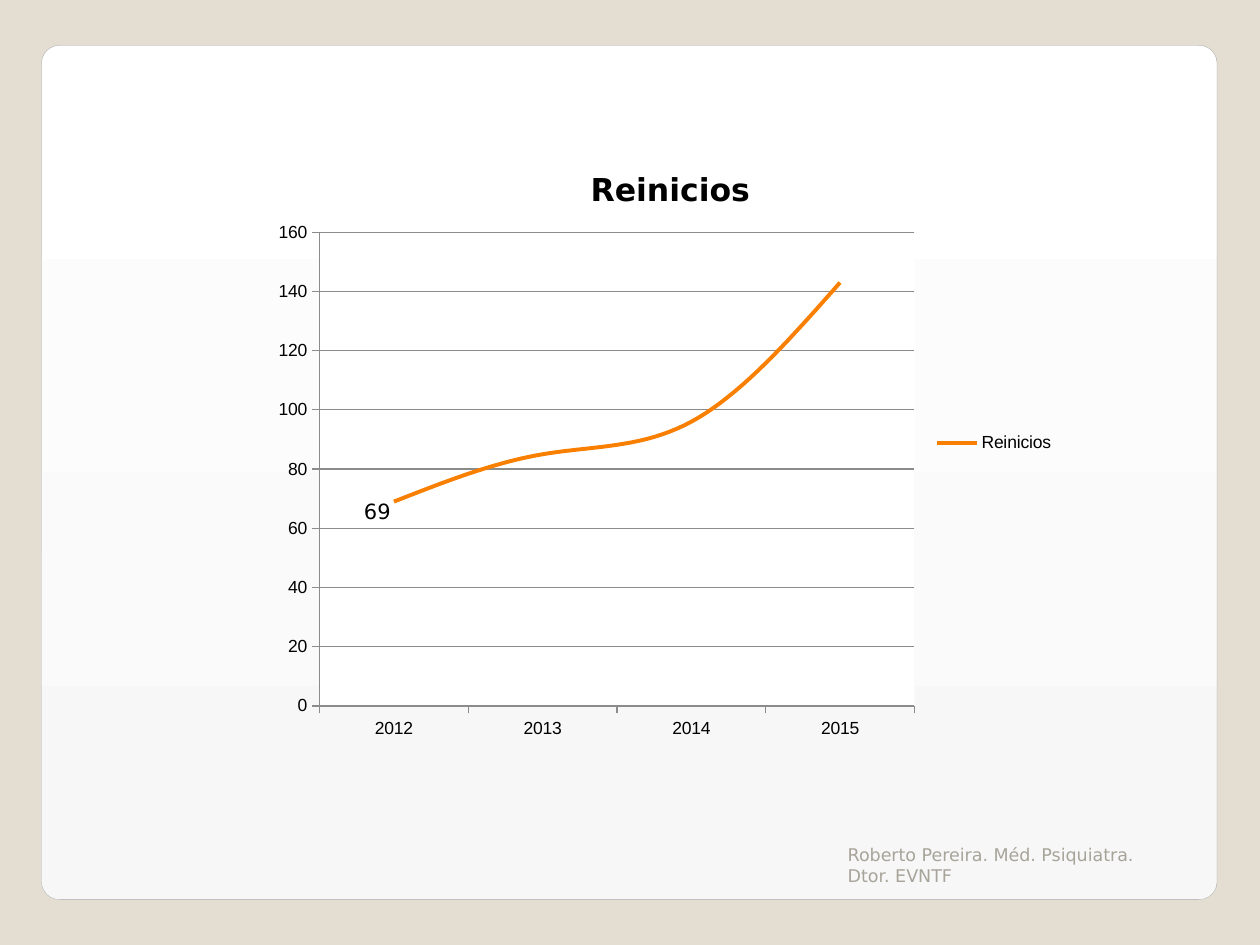
from dataclasses import dataclass

from lxml import etree
from pptx import Presentation
from pptx.chart.data import CategoryChartData
from pptx.dml.color import RGBColor
from pptx.enum.chart import XL_CHART_TYPE, XL_LEGEND_POSITION, XL_TICK_MARK
from pptx.enum.shapes import MSO_SHAPE
from pptx.enum.text import MSO_ANCHOR
from pptx.oxml.ns import qn
from pptx.util import Inches, Pt

LINE = XL_CHART_TYPE.LINE
RIGHT = XL_LEGEND_POSITION.RIGHT
OUTSIDE = XL_TICK_MARK.OUTSIDE
ROUNDED = MSO_SHAPE.ROUNDED_RECTANGLE
TOP, BOTTOM = MSO_ANCHOR.TOP, MSO_ANCHOR.BOTTOM

SAND = RGBColor(0xE3, 0xDE, 0xD1)
WHITE = RGBColor(0xFF, 0xFF, 0xFF)
PALE = RGBColor(0xF7, 0xF7, 0xF7)
EDGE = RGBColor(0xA4, 0xA4, 0xA3)
AXIS = RGBColor(0x8B, 0x8B, 0x8B)
ORANGE = RGBColor(0xF9, 0x7F, 0x00)
BLACK = RGBColor(0x00, 0x00, 0x00)
STONE = RGBColor(0xA7, 0xA4, 0x9A)

BODY_FONT, HEAD_FONT = "Arial", "DejaVu Sans"
WIDTH, HEIGHT = Inches(10), Inches(7.5)
NAME = "Reinicios"
STARTS = {"2012": 69, "2013": 85, "2014": 96, "2015": 143}


@dataclass
class Box:
    x: float
    y: float
    w: float
    h: float

    def place(self) -> tuple:
        return (int(self.x * WIDTH), int(self.y * HEIGHT),
                int(self.w * WIDTH), int(self.h * HEIGHT))


@dataclass
class Label:
    text: str
    box: Box
    size: int
    color: RGBColor
    anchor: MSO_ANCHOR


PANEL = Box(0.033, 0.048, 0.933, 0.904)
CHART = Box(0.209, 0.143, 0.638, 0.651)
LABELS = [
    Label("69", Box(0.279, 0.521, 0.055, 0.04), 12, BLACK, TOP),
    Label("Roberto Pereira. Méd. Psiquiatra. Dtor. EVNTF",
          Box(0.663, 0.891, 0.25, 0.053), 10, STONE, BOTTOM),
]


def set_font(font, color: RGBColor, **values) -> None:
    for key, value in values.items():
        setattr(font, key, value)
    font.color.rgb = color


def set_line(line, color: RGBColor, width: float) -> None:
    line.color.rgb = color
    line.width = Pt(width)


def set_layout(parent, index: int, **shares: float) -> None:
    for old in parent.findall(qn("c:layout")):
        parent.remove(old)
    layout = etree.Element(qn("c:layout"))
    parent.insert(index, layout)
    manual = etree.SubElement(layout, qn("c:manualLayout"))
    if "w" in shares:
        etree.SubElement(manual, qn("c:layoutTarget")).set("val", "inner")
    for mode in ("xMode", "yMode"):
        etree.SubElement(manual, qn(f"c:{mode}")).set("val", "edge")
    for key, share in shares.items():
        etree.SubElement(manual, qn(f"c:{key}")).set("val", str(share))


def add_panel(s) -> None:
    sp = s.shapes.add_shape(ROUNDED, *PANEL.place())
    sp.shadow.inherit = False
    sp.adjustments[0] = 0.021
    sp.fill.gradient()
    sp.fill.gradient_angle = 270
    for stop, color, position in zip(sp.fill.gradient_stops, (WHITE, PALE), (0, 1)):
        stop.color.rgb = color
        stop.position = position
    set_line(sp.line, EDGE, 0.17)


def add_line_chart(s) -> None:
    data = CategoryChartData()
    data.categories = list(STARTS)
    data.add_series(NAME, list(STARTS.values()))
    chart = s.shapes.add_chart(LINE, *CHART.place(), data).chart
    set_font(chart.font, BLACK, name=BODY_FONT, size=Pt(10))

    chart.has_title = True
    title = chart.chart_title
    title.text_frame.text = NAME
    r = title.text_frame.paragraphs[0].runs[0]
    set_font(r.font, BLACK, name=HEAD_FONT, size=Pt(18), bold=True)
    title.include_in_layout = True
    set_layout(title._element, 1, x=0.4, y=0.045)

    chart.has_legend = True
    chart.legend.position = RIGHT
    chart.legend.include_in_layout = False

    for axis in (chart.category_axis, chart.value_axis):
        axis.major_tick_mark = OUTSIDE
        set_line(axis.format.line, AXIS, 0.75)
    axis = chart.value_axis
    axis.minimum_scale, axis.maximum_scale, axis.major_unit = 0, 160, 20
    axis.has_major_gridlines = True
    set_line(axis.major_gridlines.format.line, AXIS, 0.75)

    plot = chart.plots[0]
    plot.vary_by_categories = False
    plot.series[0].smooth = True
    set_line(plot.series[0].format.line, ORANGE, 2.25)

    area = chart._chartSpace.chart.plotArea
    set_layout(area, 0, x=0.07, y=0.158, w=0.74, h=0.77)
    fill = etree.SubElement(etree.SubElement(area, qn("c:spPr")), qn("a:solidFill"))
    etree.SubElement(fill, qn("a:srgbClr")).set("val", str(WHITE))


def add_label(s, label: Label) -> None:
    tf = s.shapes.add_textbox(*label.box.place()).text_frame
    tf.word_wrap = True
    tf.vertical_anchor = label.anchor
    r = tf.paragraphs[0].add_run()
    r.text = label.text
    set_font(r.font, label.color, name=HEAD_FONT, size=Pt(label.size))


def main() -> None:
    prs = Presentation()
    prs.slide_width, prs.slide_height = WIDTH, HEIGHT
    s = prs.slides.add_slide(prs.slide_layouts[6])
    s.background.fill.solid()
    s.background.fill.fore_color.rgb = SAND
    add_panel(s)
    add_line_chart(s)
    for label in LABELS:
        add_label(s, label)
    prs.save("out.pptx")


if __name__ == "__main__":
    main()
